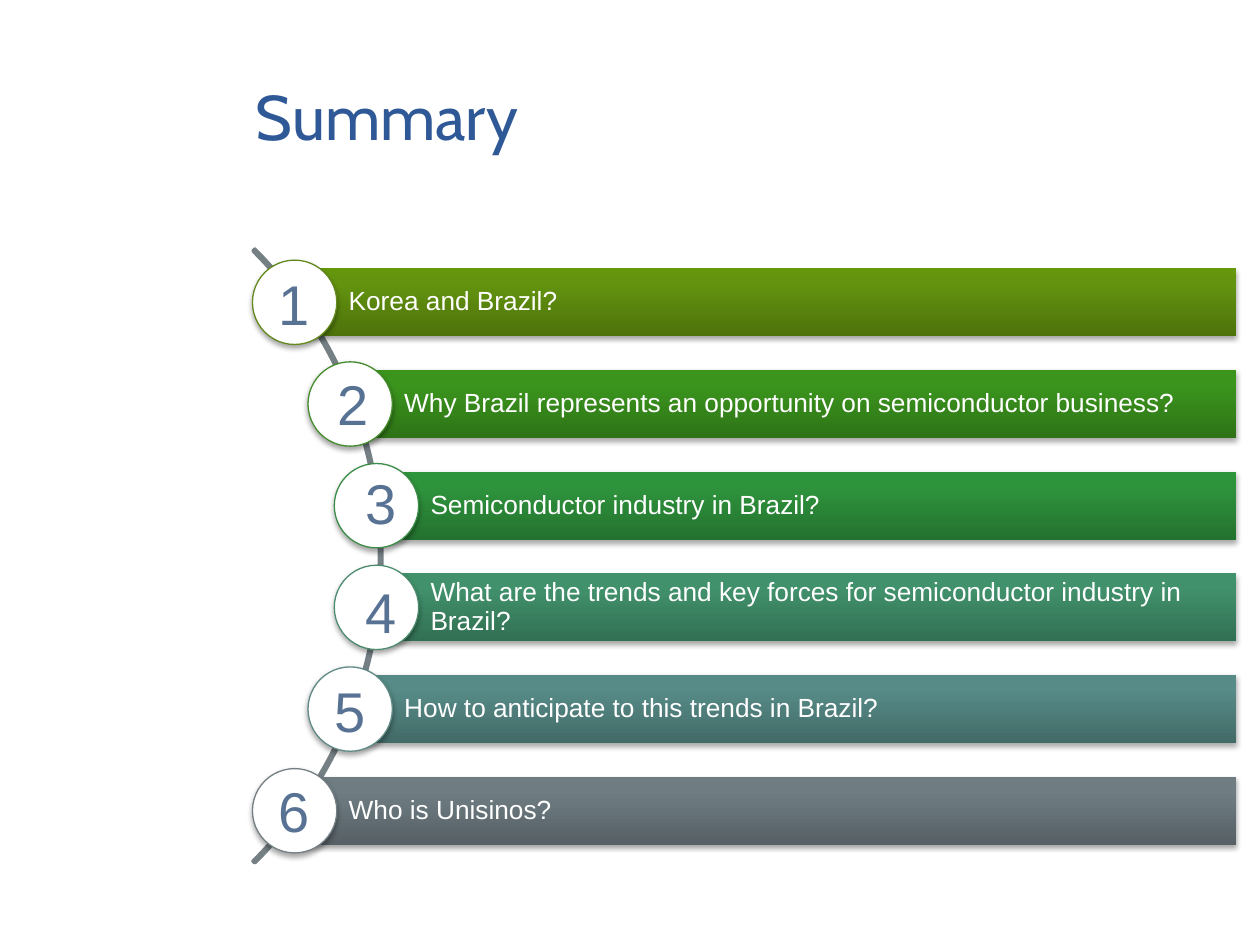
from copy import deepcopy

from lxml.etree import fromstring
from pptx import Presentation
from pptx.dml.color import RGBColor
from pptx.enum.shapes import MSO_SHAPE
from pptx.enum.text import MSO_ANCHOR, PP_ALIGN
from pptx.oxml.ns import nsdecls, qn
from pptx.util import Cm, Pt

COLORS = {
    "title": "2F5897", "number": "577293", "white": "FFFFFF", "arc": "758085",
    "olive_dark": "4D720B", "olive_mid": "64940F", "olive_light": "65970C", "olive_ring": "63891F",
    "green_dark": "2E7317", "green_mid": "3B951D", "green_light": "3A981B", "green_ring": "448C2C",
    "emerald_dark": "24722F", "emerald_mid": "2E943C", "emerald_light": "2C973B", "emerald_ring": "3C8D47",
    "jade_dark": "327053", "jade_mid": "41916C", "jade_light": "40936C", "jade_ring": "4D8C6F",
    "teal_dark": "436B68", "teal_mid": "578B87", "teal_light": "568D89", "teal_ring": "608A86",
    "slate_dark": "566065", "slate_mid": "6F7D83", "slate_light": "6F7E84", "slate_ring": "758085",
}
RGB = {name: RGBColor.from_string(value) for name, value in COLORS.items()}
SHADOW = (
    f'<a:outerShdw {nsdecls("a")} blurRad="39400" dist="22900" dir="5400000" rotWithShape="0">'
    '<a:srgbClr val="000000"><a:alpha val="35000"/></a:srgbClr></a:outerShdw>'
)


def write(tf, text, size, color, font="Arial", spacing=None):
    p = tf.paragraphs[0]
    p.alignment = PP_ALIGN.LEFT
    p.line_spacing = spacing
    r = p.add_run()
    r.text = text
    r.font.name = font
    r.font.size = Pt(size)
    r.font.color.rgb = RGB[color]


def add_shadow(shape):
    shape.shadow.inherit = False
    shape._element.spPr.find(qn("a:effectLst")).append(fromstring(SHADOW))


prs = Presentation()
prs.slide_width, prs.slide_height = Cm(25.4), Cm(19.05)
s = prs.slides.add_slide(prs.slide_layouts[5])

title = s.shapes.title
title.left, title.top, title.width, title.height = Cm(4.9), Cm(0.13), Cm(14.33), Cm(4.39)
title.text_frame.vertical_anchor = MSO_ANCHOR.MIDDLE
write(title.text_frame, "Summary", 36, "title", font="Cabin")

arc = s.shapes.add_shape(MSO_SHAPE.BLOCK_ARC, Cm(-9.8), Cm(2.46), Cm(17.5), Cm(17.5))
for i, value in enumerate((189, 27, 0.003)):
    arc.adjustments[i] = value
arc.fill.background()
arc.line.color.rgb = RGB["arc"]
arc.line.width = Pt(2)
arc.shadow.inherit = False

TOP, PITCH, RIGHT = 5.41, 2.05, 24.92
BAR_H, RING = 1.37, 1.7
rows = [
    ("Korea and Brazil?", "olive", 5.94, (5.36, 5.31)),
    ("Why Brazil represents an opportunity on semiconductor business?", "green", 7.06, (6.55, 7.32)),
    ("Semiconductor industry in Brazil?", "emerald", 7.59, (7.11, 9.32)),
    ("What are the trends and key forces for semiconductor industry in Brazil?", "jade", 7.59, (7.11, 11.51)),
    ("How to anticipate to this trends in Brazil?", "teal", 7.06, (6.5, 13.51)),
    ("Who is Unisinos?", "slate", 5.94, (5.36, 15.52)),
]

for i, (text, hue, left, number_at) in enumerate(rows):
    top = TOP + i * PITCH
    bar = s.shapes.add_shape(MSO_SHAPE.RECTANGLE, Cm(left), Cm(top), Cm(RIGHT - left), Cm(BAR_H))
    bar.fill.gradient()
    bar.fill.gradient_angle = 90
    stops = bar._element.spPr.find(qn("a:gradFill")).find(qn("a:gsLst"))
    stops.append(deepcopy(stops[-1]))
    for stop, position, shade in zip(bar.fill.gradient_stops, (0, 0.8, 1), ("dark", "mid", "light")):
        stop.position = position
        stop.color.rgb = RGB[f"{hue}_{shade}"]
    bar.line.fill.background()
    add_shadow(bar)
    tf = bar.text_frame
    tf.word_wrap = True
    tf.vertical_anchor = MSO_ANCHOR.MIDDLE
    tf.margin_left = Cm(1.09)
    tf.margin_top = tf.margin_right = tf.margin_bottom = Cm(0.1)
    write(tf, text, 15, "white", spacing=0.9)

    ring = s.shapes.add_shape(
        MSO_SHAPE.OVAL, Cm(left - RING / 2), Cm(top + (BAR_H - RING) / 2), Cm(RING), Cm(RING)
    )
    ring.fill.solid()
    ring.fill.fore_color.rgb = RGB["white"]
    ring.line.color.rgb = RGB[f"{hue}_ring"]
    ring.line.width = Pt(0.75)
    add_shadow(ring)

    x, y = number_at
    number = s.shapes.add_textbox(Cm(x), Cm(y), Cm(1.14), Cm(1.63))
    write(number.text_frame, str(i + 1), 32, "number")

prs.save("out.pptx")
